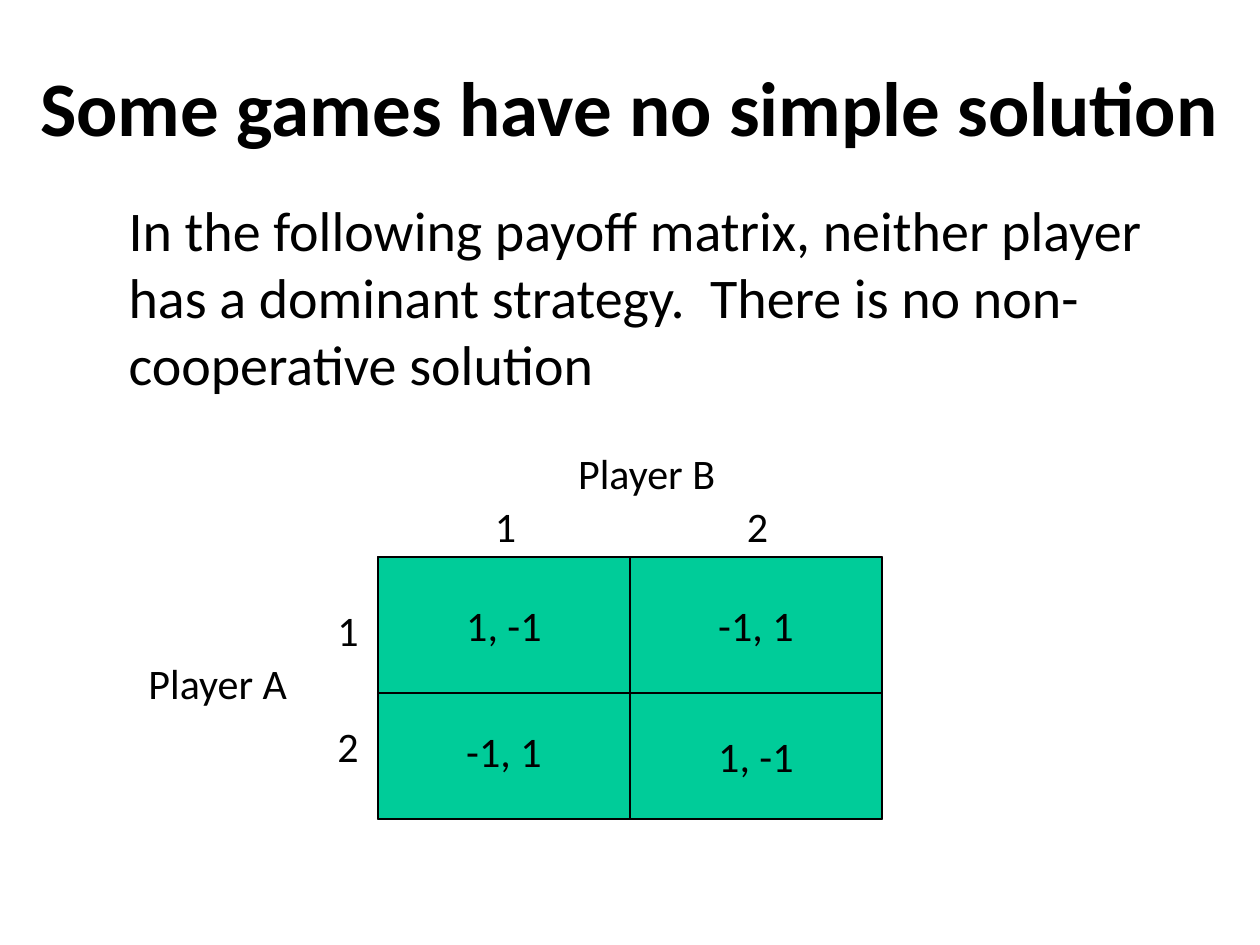
from dataclasses import dataclass

from lxml import etree
from pptx import Presentation
from pptx.dml.color import RGBColor
from pptx.enum.shapes import MSO_SHAPE
from pptx.enum.text import MSO_ANCHOR, MSO_AUTO_SIZE, PP_ALIGN
from pptx.oxml.ns import qn
from pptx.util import Inches, Pt


@dataclass(frozen=True)
class Theme:
    font: str = "Calibri"
    ink: RGBColor = RGBColor(0x00, 0x00, 0x00)
    cell: RGBColor = RGBColor(0x00, 0xCC, 0x99)
    title: Pt = Pt(44)
    body: Pt = Pt(32)
    label: Pt = Pt(24)
    line: Pt = Pt(0.75)


THEME = Theme()

PAYOFFS = [
    ("", 3, 4.42, 4, 2.08),
    ("-1, 1", 3, 5.42, 2, 1.08),
    ("1, -1", 3, 4.42, 2, 1.08),
    ("-1, 1", 5, 4.42, 2, 1.08),
    ("1, -1", 5, 5.5, 2, 1),
]

LABELS = [
    ("Player A", 1.08, 5.17, 1.31),
    ("1", 2.58, 4.75, 0.37),
    ("2", 2.58, 5.67, 0.37),
    ("Player B", 4.49, 3.5, 1.3),
    ("1", 3.83, 3.92, 0.37),
    ("2", 5.83, 3.92, 0.37),
]


def apply(obj, values):
    for name, value in values.items():
        setattr(obj, name, value)


def write(tf, text, size, align=PP_ALIGN.LEFT, bold=False, **frame):
    apply(tf, frame)
    p = tf.paragraphs[0]
    p.alignment = align
    r = p.add_run()
    r.text = text
    apply(r.font, {"name": THEME.font, "size": size, "bold": bold})
    r.font.color.rgb = THEME.ink
    return p


def place(sp, left, top, width, height):
    apply(sp, {
        "left": Inches(left),
        "top": Inches(top),
        "width": Inches(width),
        "height": Inches(height),
    })


def add_title(s, text):
    sp = s.shapes.title
    place(sp, 0, 0.42, 10, 0.83)
    write(sp.text_frame, text, THEME.title, PP_ALIGN.CENTER, True,
          vertical_anchor=MSO_ANCHOR.MIDDLE, auto_size=MSO_AUTO_SIZE.NONE)


def add_body(s, text):
    sp = s.placeholders[1]
    place(sp, 0.92, 1.5, 8.5, 1.25)
    p = write(sp.text_frame, text, THEME.body, auto_size=MSO_AUTO_SIZE.NONE)
    ppr = p._p.get_or_add_pPr()
    ppr.set("marL", "0")
    ppr.set("indent", "0")
    etree.SubElement(ppr, qn("a:buNone"))


def add_cell(s, text, left, top, width, height):
    sp = s.shapes.add_shape(MSO_SHAPE.RECTANGLE, Inches(left), Inches(top),
                            Inches(width), Inches(height))
    sp.shadow.inherit = False
    sp.fill.solid()
    sp.fill.fore_color.rgb = THEME.cell
    sp.line.color.rgb = THEME.ink
    sp.line.width = THEME.line
    if text:
        write(sp.text_frame, text, THEME.label, PP_ALIGN.CENTER,
              vertical_anchor=MSO_ANCHOR.MIDDLE, word_wrap=False)


def add_label(s, text, left, top, width):
    sp = s.shapes.add_textbox(Inches(left), Inches(top), Inches(width), Inches(0.5))
    write(sp.text_frame, text, THEME.label, word_wrap=False,
          auto_size=MSO_AUTO_SIZE.SHAPE_TO_FIT_TEXT)


def main():
    prs = Presentation()
    apply(prs, {"slide_width": Inches(10), "slide_height": Inches(7.5)})
    s = prs.slides.add_slide(prs.slide_layouts[1])
    add_title(s, "Some games have no simple solution")
    add_body(s, "In the following payoff matrix, neither player has a dominant "
                "strategy.  There is no non-cooperative solution")
    for payoff in PAYOFFS:
        add_cell(s, *payoff)
    for label in LABELS:
        add_label(s, *label)
    prs.save("out.pptx")


if __name__ == "__main__":
    main()
